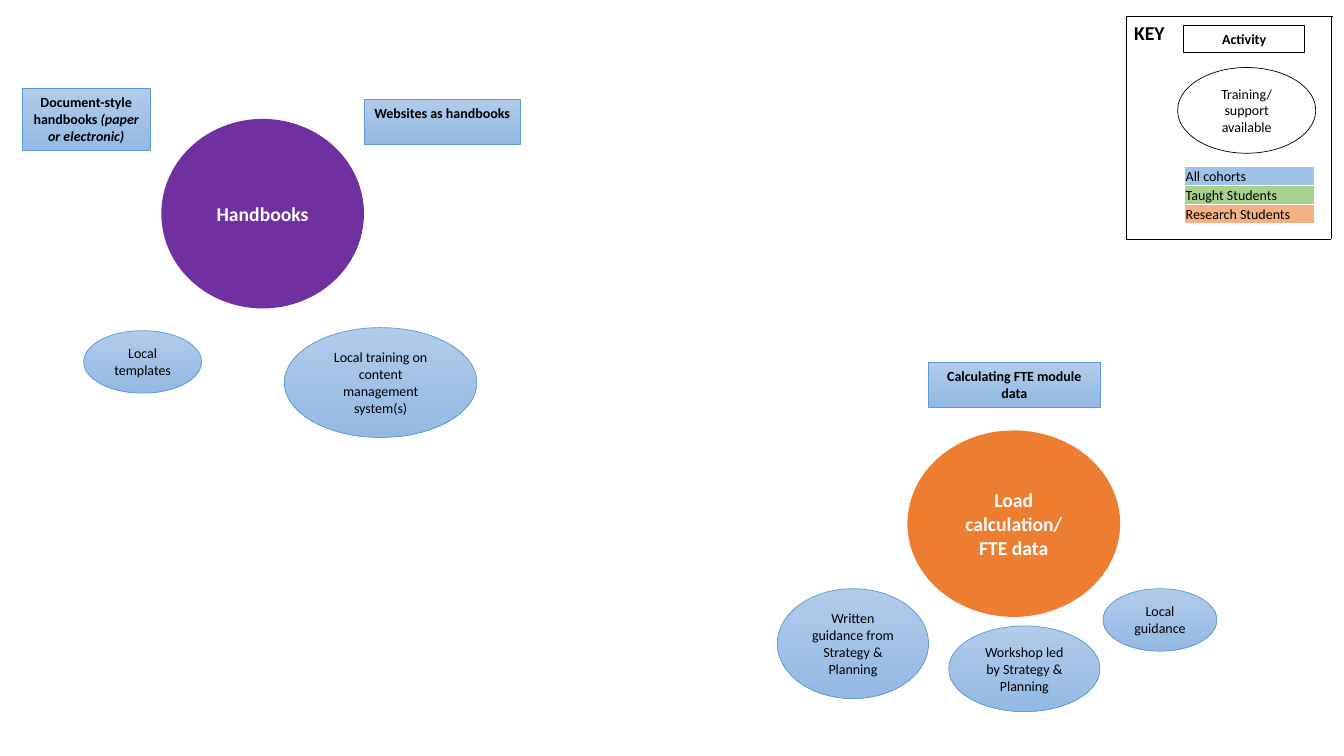
from lxml.etree import SubElement
from pptx import Presentation
from pptx.dml.color import RGBColor
from pptx.enum.shapes import MSO_CONNECTOR, MSO_SHAPE
from pptx.enum.text import MSO_ANCHOR, MSO_AUTO_SIZE, PP_ALIGN
from pptx.oxml.ns import qn
from pptx.util import Inches, Pt

BLACK, WHITE = "000000", "FFFFFF"


def rgb(value):
    return RGBColor.from_string(value)


def write(p, text, size=10, color=BLACK, bold=False, italic=False,
          align=PP_ALIGN.CENTER):
    """Add one formatted run to a paragraph and align the paragraph."""
    p.alignment = align
    r = p.add_run()
    r.text = text
    r.font.name = "Calibri"
    r.font.size = Pt(size)
    r.font.bold = bold
    r.font.italic = italic
    r.font.color.rgb = rgb(color)


class CohortMap:
    cohort_top, cohort_bottom, cohort_line = "B1CBE9", "93B9E4", "5B9BD5"

    def __init__(self, prs):
        self.s = prs.slides.add_slide(prs.slide_layouts[6])

    def shape(self, kind, box):
        sp = self.s.shapes.add_shape(kind, *map(Inches, box))
        sp.shadow.inherit = False
        sp.text_frame.word_wrap = True
        return sp

    def label(self, sp, *runs, bold=False):
        """Write top-anchored text in a shape; runs after the first are italic."""
        tf = sp.text_frame
        tf.vertical_anchor = MSO_ANCHOR.TOP
        tf.auto_size = MSO_AUTO_SIZE.SHAPE_TO_FIT_TEXT
        for i, text in enumerate(runs):
            write(tf.paragraphs[0], text, bold=bold, italic=i > 0)

    def topic(self, box, color, *lines):
        sp = self.shape(MSO_SHAPE.OVAL, box)
        sp.fill.solid()
        sp.fill.fore_color.rgb = rgb(color)
        sp.line.fill.background()
        tf = sp.text_frame
        tf.vertical_anchor = MSO_ANCHOR.MIDDLE
        for i, text in enumerate(lines):
            p = tf.add_paragraph() if i else tf.paragraphs[0]
            write(p, text, size=14, color=WHITE, bold=True)

    def cohort_shape(self, kind, box, *runs, bold=False):
        """Add a shape in the blue gradient that stands for all cohorts."""
        sp = self.shape(kind, box)
        sp.fill.gradient()
        sp.fill.gradient_angle = 270
        stops = sp.fill.gradient_stops
        for stop, pos, color in zip(stops, (0, 1),
                                    (self.cohort_top, self.cohort_bottom)):
            stop.position = pos
            stop.color.rgb = rgb(color)
        sp.line.color.rgb = rgb(self.cohort_line)
        sp.line.width = Pt(0.5)
        self.label(sp, *runs, bold=bold)

    def activity(self, box, *runs):
        self.cohort_shape(MSO_SHAPE.RECTANGLE, box, *runs, bold=True)

    def support(self, box, text):
        self.cohort_shape(MSO_SHAPE.OVAL, box, text)

    def key_shape(self, kind, box, text, width, bold=False):
        sp = self.shape(kind, box)
        sp.fill.background()
        sp.line.color.rgb = rgb(BLACK)
        sp.line.width = Pt(width)
        self.label(sp, text, bold=bold)

    def title(self, box, text):
        tf = self.s.shapes.add_textbox(*map(Inches, box)).text_frame
        tf.word_wrap = True
        tf.auto_size = MSO_AUTO_SIZE.SHAPE_TO_FIT_TEXT
        write(tf.paragraphs[0], text, size=14, bold=True, align=PP_ALIGN.RIGHT)

    def line(self, x1, y1, x2, y2):
        c = self.s.shapes.add_connector(MSO_CONNECTOR.STRAIGHT,
                                        *map(Inches, (x1, y1, x2, y2)))
        c.line.color.rgb = rgb(BLACK)
        c.line.width = Pt(0.5)
        SubElement(c._element.spPr, qn("a:effectLst"))

    def color_table(self, box, rows):
        table = self.s.shapes.add_table(len(rows), 1, *map(Inches, box)).table
        table.first_row = False
        table.horz_banding = False
        for i, (text, color) in enumerate(rows):
            cell = table.cell(i, 0)
            cell.fill.solid()
            cell.fill.fore_color.rgb = rgb(color)
            cell.vertical_anchor = MSO_ANCHOR.BOTTOM
            cell.margin_left = cell.margin_right = cell.margin_top = Inches(0.01)
            cell.margin_bottom = 0
            write(cell.text_frame.paragraphs[0], text, align=PP_ALIGN.LEFT)


def main():
    prs = Presentation()
    prs.slide_width, prs.slide_height = Inches(13.33), Inches(7.5)
    m = CohortMap(prs)

    m.topic((1.6, 1.18, 2.01, 1.88), "7030A0", "Handbooks")
    m.activity((0.22, 0.88, 1.27, 0.61),
               "Document-style handbooks ", "(paper or electronic)")
    m.activity((3.61, 0.99, 1.55, 0.44), "Websites as handbooks")
    m.support((0.83, 3.28, 1.17, 0.62), "Local templates")
    m.support((2.82, 3.25, 1.91, 1.09),
              "Local training on content management system(s)")

    m.topic((9, 4.27, 2.11, 1.85), "ED7D31", "Load calculation/", "FTE data")
    m.activity((9.21, 3.6, 1.7, 0.44), "Calculating FTE module data")
    m.support((7.71, 5.84, 1.5, 1.09), "Written guidance from Strategy & Planning")
    m.support((9.41, 6.21, 1.5, 0.85), "Workshop led by Strategy & Planning")
    m.support((10.94, 5.84, 1.13, 0.62), "Local guidance")

    m.title((11.01, 0.16, 0.64, 0.34), "KEY")
    m.key_shape(MSO_SHAPE.RECTANGLE, (11.74, 0.25, 1.2, 0.27), "Activity",
                0.75, bold=True)
    m.key_shape(MSO_SHAPE.OVAL, (11.68, 0.67, 1.37, 0.85),
                "Training/ support available", 0.5)
    m.color_table((11.75, 1.65, 1.29, 0.57), [
        ("All cohorts", "9DC3E6"),
        ("Taught Students", "A9D18E"),
        ("Research Students", "F4B183"),
    ])
    left, top, right, bottom = 11.17, 0.16, 13.2, 2.37
    m.line(left, top, left, bottom)
    m.line(left, bottom, right, bottom)
    m.line(left, top, right + 0.02, top)
    m.line(right, bottom, right, top)

    prs.save("out.pptx")


if __name__ == "__main__":
    main()
